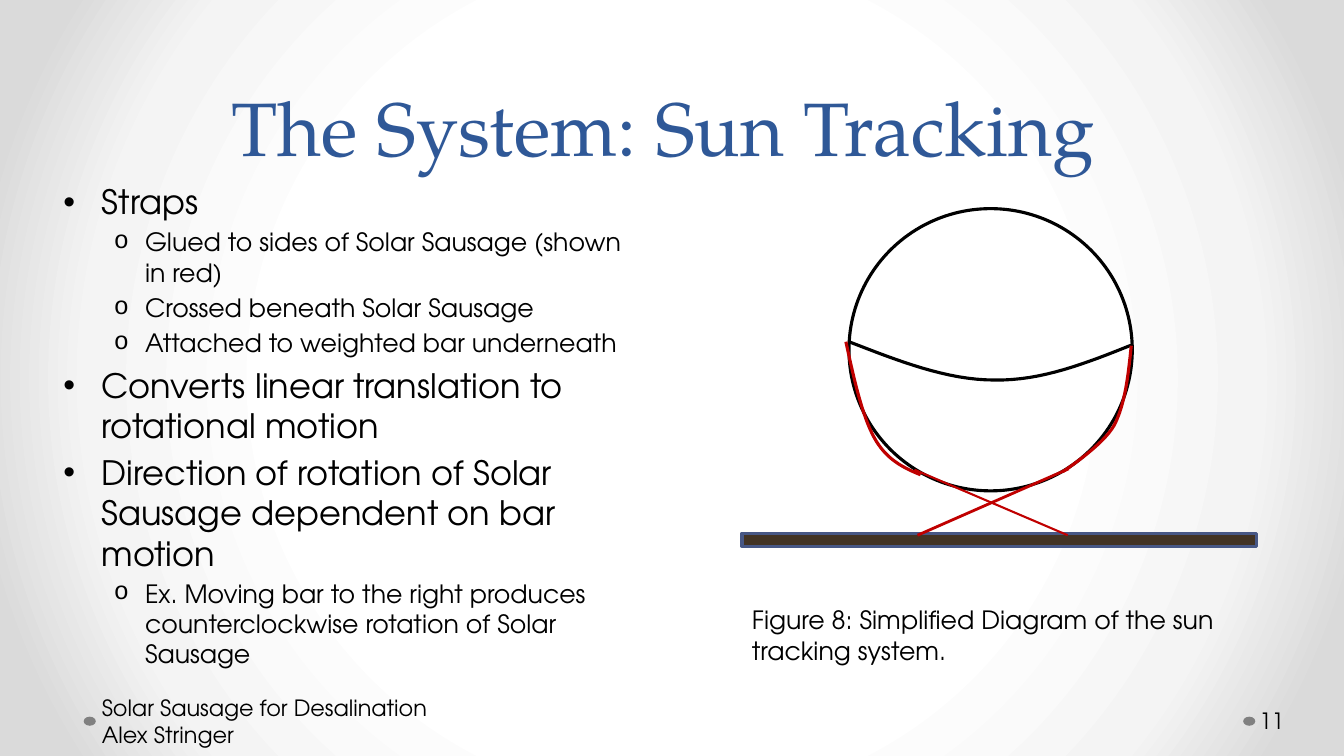
from pptx import Presentation
from pptx.dml.color import RGBColor
from pptx.enum.shapes import MSO_CONNECTOR, MSO_SHAPE
from pptx.enum.text import MSO_ANCHOR, PP_ALIGN
from pptx.oxml import parse_xml
from pptx.oxml.ns import nsdecls
from pptx.util import Inches, Pt

SANS, SERIF = "TeX Gyre Adventor", "TeX Gyre Pagella"
BLACK, RED = "000000", "C00000"
POINTS = [
    (0, "Straps"),
    (1, "Glued to sides of Solar Sausage (shown in red)"),
    (1, "Crossed beneath Solar Sausage"),
    (1, "Attached to weighted bar underneath"),
    (0, "Converts linear translation to rotational motion"),
    (0, "Direction of rotation of Solar Sausage dependent on bar motion"),
    (1, "Ex. Moving bar to the right produces counterclockwise rotation "
        "of Solar Sausage"),
]
# Per level: size, left margin, hanging indent, bullet, bullet font
LEVELS = [(24, 0.38, 0.38, "•", "Arial"), (18, 0.81, 0.31, "o", "Courier New")]


def color(text):
    return RGBColor.from_string(text)


def add_box(slide, box, anchor=MSO_ANCHOR.TOP, inset=(0.1, 0.05, 0.1, 0.05)):
    frame = slide.shapes.add_textbox(*map(Inches, box)).text_frame
    frame.word_wrap = True
    frame.vertical_anchor = anchor
    (frame.margin_left, frame.margin_top,
     frame.margin_right, frame.margin_bottom) = map(Inches, inset)
    return frame


def add_para(frame, index, text, size, font=SANS, ink=BLACK):
    para = frame.add_paragraph() if index else frame.paragraphs[0]
    run = para.add_run()
    run.text = text
    run.font.size = Pt(size)
    run.font.name = font
    run.font.color.rgb = color(ink)
    return para


def set_line(shape, ink, width):
    shape.line.color.rgb = color(ink)
    shape.line.width = Pt(width)


def add_solid(slide, kind, box, fill, ink=None, width=2.25):
    shape = slide.shapes.add_shape(kind, *map(Inches, box))
    shape.shadow.inherit = False
    shape.fill.solid()
    shape.fill.fore_color.rgb = color(fill)
    if ink:
        set_line(shape, ink, width)
    else:
        shape.line.fill.background()


def add_strap(slide, start, end, width):
    line = slide.shapes.add_connector(
        MSO_CONNECTOR.STRAIGHT, *map(Inches, start + end))
    set_line(line, RED, width)
    line._element.spPr.append(parse_xml(f"<a:effectLst {nsdecls('a')}/>"))


def add_curve(slide, box, knots, ink, steps=16):
    """Draw joined cubic curves; knots are relative to the box corner."""
    left, top = box[:2]
    dots = []
    for first in range(0, len(knots) - 1, 3):
        for step in range(steps + 1):
            t = step / steps
            mix = ((1 - t) ** 3, 3 * t * (1 - t) ** 2,
                   3 * t * t * (1 - t), t ** 3)
            dots.append(tuple(
                Inches(base + sum(m * k[axis] for m, k
                                  in zip(mix, knots[first:first + 4])))
                for axis, base in enumerate((left, top))))
    pen = slide.shapes.build_freeform(*dots[0])
    pen.add_line_segments(dots[1:], close=False)
    shape = pen.convert_to_shape()
    shape.shadow.inherit = False
    shape.fill.background()
    set_line(shape, ink, 2.25)


def add_back(slide):
    """Fill the background with a round white to grey gradient."""
    stops = "".join(
        f'<a:gs pos="{pos}000"><a:srgbClr val="{ink}"/></a:gs>'
        for pos, ink in ((50, "FFFFFF"), (76, "F4F4F4"), (92, "DADADA")))
    slide.element.cSld.insert(0, parse_xml(
        f'<p:bg {nsdecls("p", "a")}><p:bgPr><a:gradFill rotWithShape="1">'
        f'<a:gsLst>{stops}</a:gsLst><a:path path="circle">'
        '<a:fillToRect l="50000" t="50000" r="50000" b="50000"/></a:path>'
        '</a:gradFill><a:effectLst/></p:bgPr></p:bg>'))


def add_title(slide, box):
    frame = add_box(slide, box, MSO_ANCHOR.BOTTOM)
    para = add_para(frame, 0, "The System: Sun Tracking ", 54, SERIF, "2F5897")
    para.alignment = PP_ALIGN.CENTER
    para.line_spacing = Pt(58)


def add_points(slide, box):
    frame = add_box(slide, box)
    for index, (level, text) in enumerate(POINTS):
        size, margin, hang, mark, font = LEVELS[level]
        para = add_para(frame, index, text, size)
        para.level = level
        para.space_before = Pt(size * 0.2)
        props = para._p.get_or_add_pPr()
        props.set("marL", str(Inches(margin)))
        props.set("indent", str(-Inches(hang)))
        for tag in (f'buFont {nsdecls("a")} typeface="{font}"',
                    f'buChar {nsdecls("a")} char="{mark}"'):
            props.append(parse_xml(f"<a:{tag}/>"))


def add_figure(slide, box):
    left, top, width, height = box
    ball = (left + 1.06, top, 2.81, 2.8)
    add_solid(slide, MSO_SHAPE.OVAL, ball, "FFFFFF", BLACK)
    add_solid(slide, MSO_SHAPE.RECTANGLE, (left, top + 3.22, width, 0.13),
              "423324", "475785")
    add_strap(slide, (left + 1.71, top + 2.59), (left + 3.23, top + 3.24), 1.5)
    add_strap(slide, (left + 1.74, top + 3.24), (left + 3.24, top + 2.58), 2)
    add_curve(slide, ball, [
        (0, 1.32), (0.49, 1.51), (0.97, 1.7), (1.44, 1.7),
        (1.91, 1.71), (2.36, 1.53), (2.81, 1.35)], BLACK)
    add_curve(slide, ball, [
        (-0.03, 1.32), (0.05, 1.69), (0.13, 2.05), (0.25, 2.27),
        (0.37, 2.49), (0.54, 2.57), (0.71, 2.64)], RED)
    add_curve(slide, ball, [
        (2.8, 1.36), (2.77, 1.65), (2.74, 1.94), (2.63, 2.15),
        (2.52, 2.35), (2.12, 2.61), (2.12, 2.61)], RED)
    caption = add_box(slide, (left, top + height - 0.71, width, 0.71))
    add_para(caption, 0,
             "Figure 8: Simplified Diagram of the sun tracking system.", 18)


def add_footer(slide, box, lines, inset):
    left, top = box[:2]
    add_solid(slide, MSO_SHAPE.OVAL, (left - 0.13, top + 0.16, 0.12, 0.09),
              "808080")
    frame = add_box(slide, box, MSO_ANCHOR.MIDDLE, inset)
    for index, text in enumerate(lines):
        add_para(frame, index, text, 16)


def main():
    deck = Presentation()
    deck.slide_width, deck.slide_height = Inches(13.33), Inches(7.5)
    slide = deck.slides.add_slide(deck.slide_layouts[6])
    add_back(slide)
    add_title(slide, (0.67, 0, 12, 1.75))
    add_points(slide, (0.53, 1.75, 5.89, 4.95))
    add_figure(slide, (7.36, 2.07, 5.1, 4.59))
    add_footer(slide, (0.96, 6.95, 4.15, 0.4),
               ["Solar Sausage for Desalination", "Alex Stringer"],
               (0.05, 0.05, 0.1, 0.05))
    add_footer(slide, (12.46, 6.95, 0.82, 0.4), ["11"],
               (0.03, 0.05, 0.05, 0.05))
    deck.save("out.pptx")


if __name__ == "__main__":
    main()
